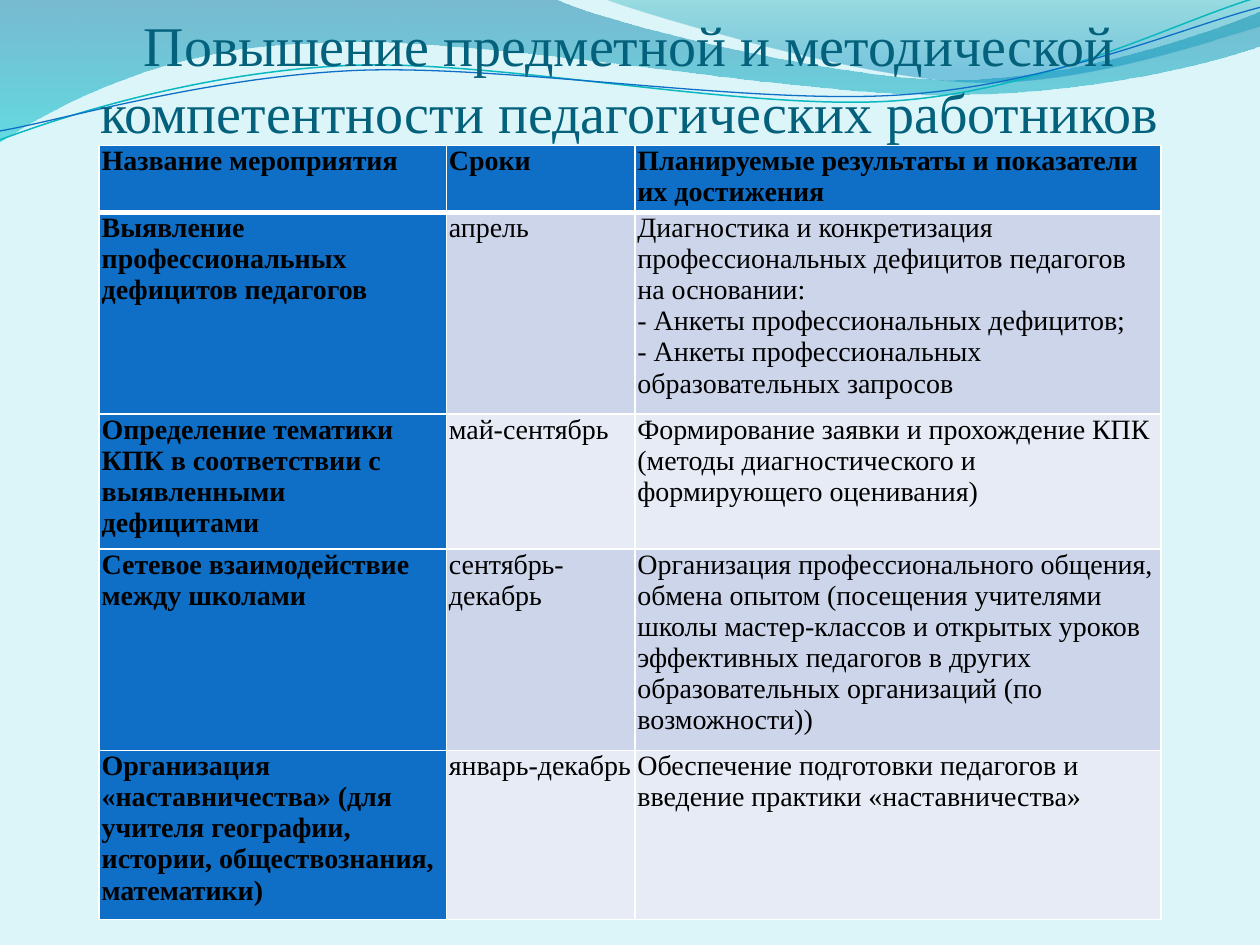
"""Builds the slide on teachers' professional development with its plan table."""
from lxml import etree
from pptx import Presentation, util as u
from pptx.dml.color import RGBColor
from pptx.enum import text
from pptx.oxml import ns

PALE = RGBColor(0xDB, 0xF5, 0xF9)
TITLE = RGBColor(0x04, 0x61, 0x7B)
BLACK = RGBColor(0, 0, 0)
WHITE = RGBColor(0xFF, 0xFF, 0xFF)
BLUE = RGBColor(0x0F, 0x6F, 0xC6)
BAND_DARK = RGBColor(0xCC, 0xD5, 0xEA)
BAND_LIGHT = RGBColor(0xE7, 0xEB, 0xF5)
TEAL = RGBColor(0x0A, 0xB8, 0xBF)
DEEP_BLUE = RGBColor(0x00, 0x74, 0xA1)
CYAN = RGBColor(0x00, 0xC6, 0xCF)
SEA = RGBColor(0x00, 0xA1, 0xA9)
AZURE = RGBColor(0x00, 0x8B, 0xBF)

HEADING = "Повышение предметной и методической компетентности педагогических работников"
PLAN = [
    ("Название мероприятия", "Сроки", "Планируемые результаты и показатели их достижения"),
    ("Выявление профессиональных дефицитов педагогов", "апрель",
     "Диагностика и конкретизация профессиональных дефицитов педагогов на основании:\n"
     "- Анкеты профессиональных дефицитов;\n"
     "- Анкеты профессиональных образовательных запросов"),
    ("Определение тематики КПК в соответствии с выявленными дефицитами", "май-сентябрь",
     "Формирование заявки и прохождение КПК (методы диагностического и формирующего оценивания)"),
    ("Сетевое взаимодействие между школами", "сентябрь-декабрь",
     "Организация профессионального общения, обмена опытом (посещения учителями школы "
     "мастер-классов и открытых уроков эффективных педагогов в других образовательных "
     "организаций (по возможности))"),
    ("Организация «наставничества» (для учителя географии, истории, обществознания, математики)",
     "январь-декабрь",
     "Обеспечение подготовки педагогов и введение практики «наставничества»"),
]
COLUMNS = (7, 3.8, 10.6)
ROWS = (1.35, 4.06, 2.72, 4.06, 3.4)

WIDE_WAVE = [
    (0, 0), (11.18, -0.03),
    (12.09, 0.43, 16.87, 1.6, 19.25, 1.6), (21.67, 1.6, 24.33, 0.66, 25.4, 0.23),
    (25.43, 0.91), (24.97, 1.12, 22.1, 1.93, 18.95, 1.91),
    (15.8, 1.91, 9.7, 0.71, 6.53, 0.86), (3.28, 0.91, 1.17, 2.11, -0.03, 2.87),
]
RIGHT_WAVE = [
    (12.17, -0.03), (12.93, 0.28, 17.32, 1.57, 19.53, 1.65),
    (21.74, 1.75, 24.41, 0.81, 25.4, 0.53), (25.4, 0),
]
TEAL_LINE = [
    (0, 2.82), (1.22, 2.36, 4.01, 1.45, 7.04, 1.32),
    (10.03, 1.19, 15.06, 2.26, 18.11, 2.03), (21.16, 1.8, 23.83, 0.38, 25.35, -0.05),
]
BLUE_LINE = [
    (0, 2.64), (1.19, 2.44, 4.17, 1.55, 7.19, 1.42),
    (10.24, 1.3, 15.16, 2.13, 18.21, 1.91), (21.23, 1.7, 23.9, 0.53, 25.4, 0.15),
]


def write(frame, wording, *, size, color, font, bold=False, align=text.PP_ALIGN.LEFT):
    frame.word_wrap = True
    for index, line in enumerate(wording.split("\n")):
        para = frame.add_paragraph() if index else frame.paragraphs[0]
        para.alignment = align
        span = para.add_run()
        span.text = line
        span.font.name = font
        span.font.size = u.Pt(size)
        span.font.bold = bold
        span.font.color.rgb = color


class Page:
    font = "Times New Roman"

    def __init__(self, deck, background):
        self.slide = deck.slides.add_slide(deck.slide_layouts[6])
        self.slide.background.fill.solid()
        self.slide.background.fill.fore_color.rgb = background

    def outline(self, steps, closed):
        points = [(u.Cm(x), u.Cm(y)) for step in steps
                  for x, y in zip(step[::2], step[1::2])]
        builder = self.slide.shapes.build_freeform(*points[0])
        builder.add_line_segments(points[1:], close=closed)
        shape = builder.convert_to_shape()
        shape.shadow.inherit = False
        segments = iter(list(shape._element.iter(ns.qn("a:lnTo"))))
        for step in steps[1:]:
            group = [next(segments) for _ in step[::2]]
            if len(group) == 3:
                bend = etree.Element(ns.qn("a:cubicBezTo"))
                group[0].addprevious(bend)
                for segment in group:
                    bend.append(segment[0])
                    segment.getparent().remove(segment)
        return shape

    def wave(self, steps, stops):
        shape = self.outline(steps, True)
        shape.line.fill.background()
        shape.fill.gradient()
        shape.fill.gradient_angle = 270
        for stop, (position, color, _) in zip(shape.fill.gradient_stops, stops):
            stop.position = position
            stop.color.rgb = color
        tints = shape._element.spPr.iter(ns.qn("a:srgbClr"))
        for tint, (_, _, opacity) in zip(tints, stops):
            etree.SubElement(tint, ns.qn("a:alpha"), val=str(opacity * 1000))

    def curve(self, steps, color, width):
        shape = self.outline(steps, False)
        shape.fill.background()
        shape.line.color.rgb = color
        shape.line.width = u.Pt(width)

    def title(self, wording, left, top, width, height):
        box = self.slide.shapes.add_textbox(u.Cm(left), u.Cm(top), u.Cm(width), u.Cm(height))
        frame = box.text_frame
        frame.margin_left = frame.margin_right = frame.margin_bottom = 0
        frame.vertical_anchor = text.MSO_ANCHOR.BOTTOM
        write(frame, wording, size=32, color=TITLE, font=self.font,
              align=text.PP_ALIGN.CENTER)

    def border(self, cell, side, width):
        line = etree.SubElement(cell._tc.get_or_add_tcPr(), ns.qn(f"a:ln{side}"),
                                w=str(u.Pt(width)))
        fill = etree.SubElement(line, ns.qn("a:solidFill"))
        etree.SubElement(fill, ns.qn("a:srgbClr"), val=str(WHITE))

    def table(self, content, left, top, columns, rows):
        grid = self.slide.shapes.add_table(
            len(rows), len(columns), u.Cm(left), u.Cm(top),
            u.Cm(sum(columns)), u.Cm(sum(rows))).table
        for column, width in zip(grid.columns, columns):
            column.width = u.Cm(width)
        for r, height in enumerate(rows):
            grid.rows[r].height = u.Cm(height)
            for c, wording in enumerate(content[r]):
                cell = grid.cell(r, c)
                heading = r == 0 or c == 0
                cell.margin_left = cell.margin_right = u.Cm(0.05)
                cell.margin_top = cell.margin_bottom = 0
                for side in "LRTB":
                    thick = (r, side) in ((0, "B"), (1, "T"))
                    self.border(cell, side, 3 if thick else 1)
                cell.fill.solid()
                band = BAND_DARK if r % 2 else BAND_LIGHT
                cell.fill.fore_color.rgb = BLUE if heading else band
                write(cell.text_frame, wording, size=16, color=BLACK,
                      font=self.font, bold=heading)


def main():
    deck = Presentation()
    deck.slide_width, deck.slide_height = u.Cm(25.4), u.Cm(19.05)
    page = Page(deck, PALE)
    page.wave(WIDE_WAVE, [(0, DEEP_BLUE, 45), (1, CYAN, 55)])
    page.wave(RIGHT_WAVE, [(0, SEA, 30), (0.8, AZURE, 45)])
    page.curve(TEAL_LINE, TEAL, 0.85)
    page.curve(BLUE_LINE, BLUE, 0.75)
    page.title(HEADING, 1.27, 0.33, 22.86, 2.59)
    page.table(PLAN, 2, 2.93, COLUMNS, ROWS)
    deck.save("out.pptx")


if __name__ == "__main__":
    main()
